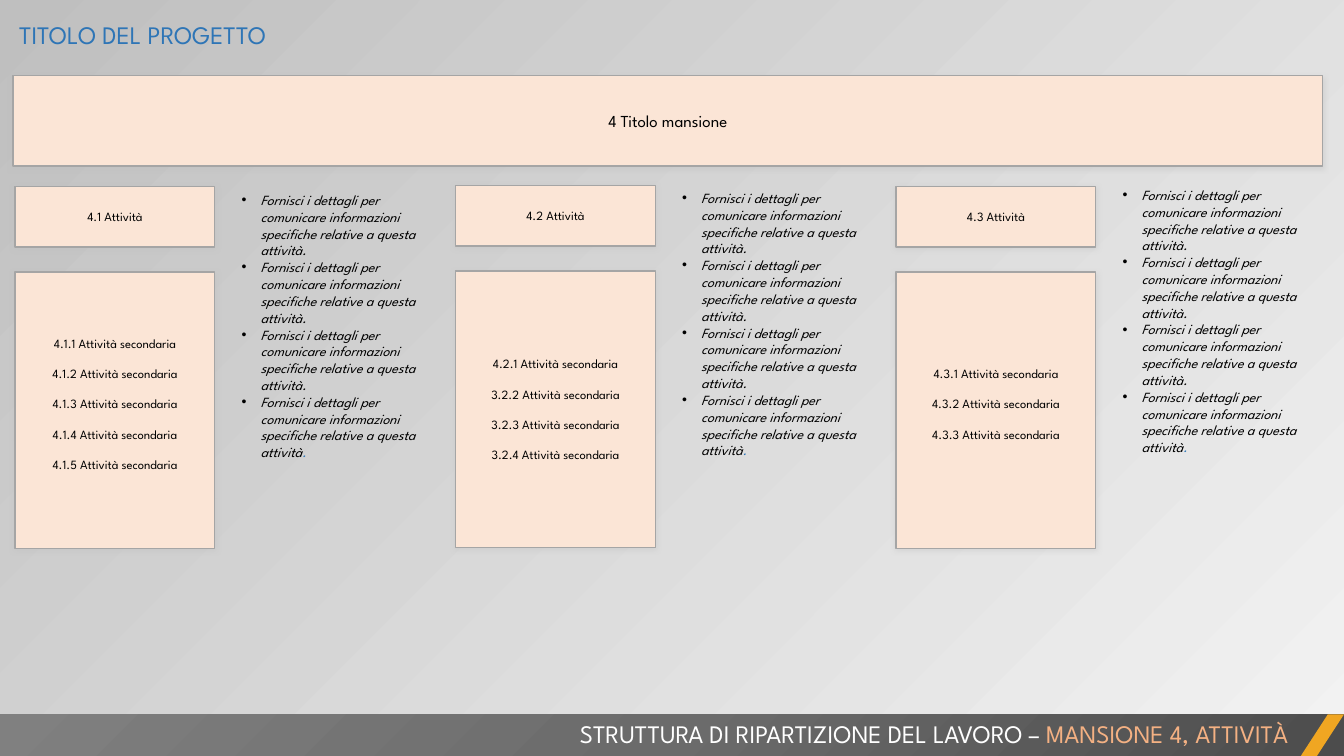
import pptx
import pptx.util
import pptx.dml.color
import pptx.enum.shapes
import pptx.enum.text
import pptx.oxml
import pptx.oxml.ns

Pt = pptx.util.Pt
RGB = pptx.dml.color.RGBColor
ALIGN = pptx.enum.text.PP_ALIGN
ANCHOR = pptx.enum.text.MSO_ANCHOR
FIT = pptx.enum.text.MSO_AUTO_SIZE
SHAPE = pptx.enum.shapes.MSO_SHAPE

PEACH = RGB(0xFB, 0xE5, 0xD6)
GREY = RGB(0xA5, 0xA5, 0xA5)
SILVER = RGB(0xBF, 0xBF, 0xBF)
PALE = RGB(0xF2, 0xF2, 0xF2)
GOLD = RGB(0xF0, 0xA6, 0x22)
BLUE = RGB(0x2E, 0x75, 0xB6)
ORANGE = RGB(0xF4, 0xB1, 0x83)
BLACK = RGB(0, 0, 0)
WHITE = RGB(0xFF, 0xFF, 0xFF)
DUSK = [(0, RGB(0x4C, 0x4C, 0x4C)), (50, RGB(0x6B, 0x6B, 0x6B)), (100, RGB(0x80, 0x80, 0x80))]

FACE = "League Spartan"
WIDE, HIGH = 960, 540
PITCH = 314.64
DETAIL = "Fornisci i dettagli per comunicare informazioni specifiche relative a questa attività"
COLUMNS = [
    ("4.1 Attività", ["4.1.1", "4.1.2", "4.1.3", "4.1.4", "4.1.5"], 133.2, 133.2, 9),
    ("4.2 Attività", ["4.2.1", "3.2.2", "3.2.3", "3.2.4"], 132.5, 131.8, 0),
    ("4.3 Attività", ["4.3.1", "4.3.2", "4.3.3"], 133.2, 129.6, 9),
]


def style(thing, **values):
    for key, value in values.items():
        setattr(thing, key, value)


def make(markup):
    start, rest = markup.split(">", 1)
    return pptx.oxml.parse_xml(f"{start} {pptx.oxml.ns.nsdecls('a')}>{rest}")


def write(frame, lines, size, align, gap=0, slant=False):
    for index, line in enumerate(lines):
        para = frame.paragraphs[0] if index == 0 else frame.add_paragraph()
        style(para, alignment=align, line_spacing=1.0, space_before=Pt(0),
              space_after=Pt(gap))
        for text, color in line:
            run = para.add_run()
            run.text = text
            style(run.font, name=FACE, size=Pt(size), italic=slant)
            run.font.color.rgb = color


def add_shade(shape):
    shape.shadow.inherit = False
    shade = make(
        f'<a:outerShdw blurRad="{Pt(4)}" dist="{Pt(1)}" dir="5400000" algn="t" rotWithShape="0">'
        f'<a:srgbClr val="{SILVER}"><a:alpha val="40000"/></a:srgbClr></a:outerShdw>')
    shape._element.spPr.find(pptx.oxml.ns.qn("a:effectLst")).append(shade)


def add_card(slide, place, texts, size, gap=0, tail=0):
    card = slide.shapes.add_shape(SHAPE.RECTANGLE, *map(Pt, place))
    card.fill.solid()
    card.fill.fore_color.rgb = PEACH
    card.line.color.rgb = GREY
    card.line.width = Pt(1)
    add_shade(card)
    frame = card.text_frame
    style(frame, word_wrap=True, vertical_anchor=ANCHOR.MIDDLE, margin_bottom=Pt(3.6 + tail))
    write(frame, [[(text, BLACK)] for text in texts], size, ALIGN.CENTER, gap)


def add_text(slide, place, lines, size, align, slant=False):
    frame = slide.shapes.add_textbox(*map(Pt, place)).text_frame
    style(frame, word_wrap=True, auto_size=FIT.SHAPE_TO_FIT_TEXT)
    write(frame, lines, size, align, slant=slant)
    return frame


def add_notes(slide, left, top):
    lines = [[(DETAIL + ".", BLACK)]] * 3 + [[(DETAIL, BLACK), (".", BLUE)]]
    frame = add_text(slide, (left, top, 148.3, 216), lines, 10, ALIGN.LEFT, True)
    for para in frame.paragraphs:
        props = para._p.get_or_add_pPr()
        props.set("marL", str(Pt(13.5)))
        props.set("indent", str(Pt(-13.5)))
        props.append(make('<a:buFont typeface="Arial"></a:buFont>'))
        props.append(make('<a:buChar char="•"></a:buChar>'))


def add_column(slide, index, head, codes, top, note_top, tail):
    left = 10.8 + index * PITCH
    add_card(slide, (left, top, 142.6, 43.2), [head], 9)
    tasks = [f"{code} Attività secondaria" for code in codes]
    add_card(slide, (left, top + 61.2, 142.6, 197.3), tasks, 9, 10.8, tail)
    add_notes(slide, left + 154.8, note_top)


def add_footer(slide):
    top, tall = 510.3, 30
    bar = slide.shapes.add_shape(SHAPE.RECTANGLE, 0, Pt(top), Pt(WIDE), Pt(tall))
    slash = slide.shapes.add_shape(SHAPE.PARALLELOGRAM, Pt(929), Pt(top), Pt(31), Pt(tall))
    slash.adjustments[0] = 0.65
    for shape in (bar, slash):
        shape.shadow.inherit = False
        shape.line.fill.background()
        shape.fill.solid()
        shape.fill.fore_color.rgb = GOLD
    stops = "".join(f'<a:gs pos="{pos * 1000}"><a:srgbClr val="{color}"/></a:gs>'
                    for pos, color in DUSK)
    blend = make(f'<a:gradFill><a:gsLst>{stops}</a:gsLst><a:path path="circle">'
                 '<a:fillToRect l="100000" t="100000"/></a:path></a:gradFill>')
    props = bar._element.spPr
    props.replace(props.find(pptx.oxml.ns.qn("a:solidFill")), blend)
    line = [("STRUTTURA DI RIPARTIZIONE DEL LAVORO – ", WHITE), ("MANSIONE 4, ATTIVITÀ", ORANGE)]
    add_text(slide, (51.1, 509.8, 876.2, 29), [line], 18, ALIGN.RIGHT)


def set_title(slide):
    title = slide.shapes.title
    style(title, left=Pt(6.5), top=Pt(10), width=Pt(728), height=Pt(29))
    style(title.text_frame, word_wrap=True, vertical_anchor=ANCHOR.TOP,
          auto_size=FIT.SHAPE_TO_FIT_TEXT)
    write(title.text_frame, [[("TITOLO DEL PROGETTO", BLUE)]], 18, ALIGN.LEFT)


def set_back(slide):
    fill = slide.background.fill
    fill.gradient()
    fill.gradient_angle = 135
    for stop, color in zip(fill.gradient_stops, (PALE, SILVER)):
        stop.color.rgb = color
    first = fill.gradient_stops[0]._gs[0]
    first.append(make('<a:alpha val="40000"></a:alpha>'))


def main():
    deck = pptx.Presentation()
    style(deck, slide_width=Pt(WIDE), slide_height=Pt(HIGH))
    slide = deck.slides.add_slide(deck.slide_layouts[5])
    set_back(slide)
    set_title(slide)
    add_card(slide, (9.4, 54, 935.3, 64.5), ["4 Titolo mansione"], 12)
    for index, column in enumerate(COLUMNS):
        add_column(slide, index, *column)
    add_footer(slide)
    deck.save("out.pptx")


if __name__ == "__main__":
    main()
